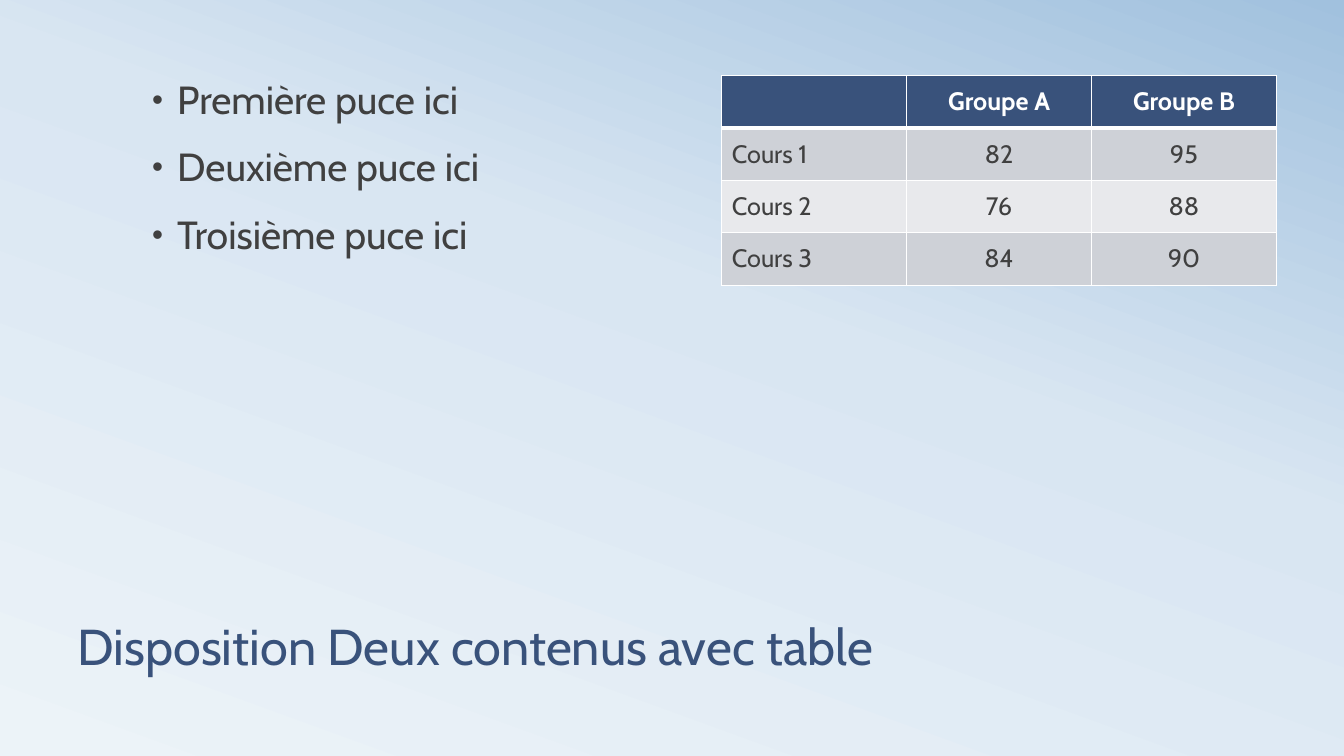
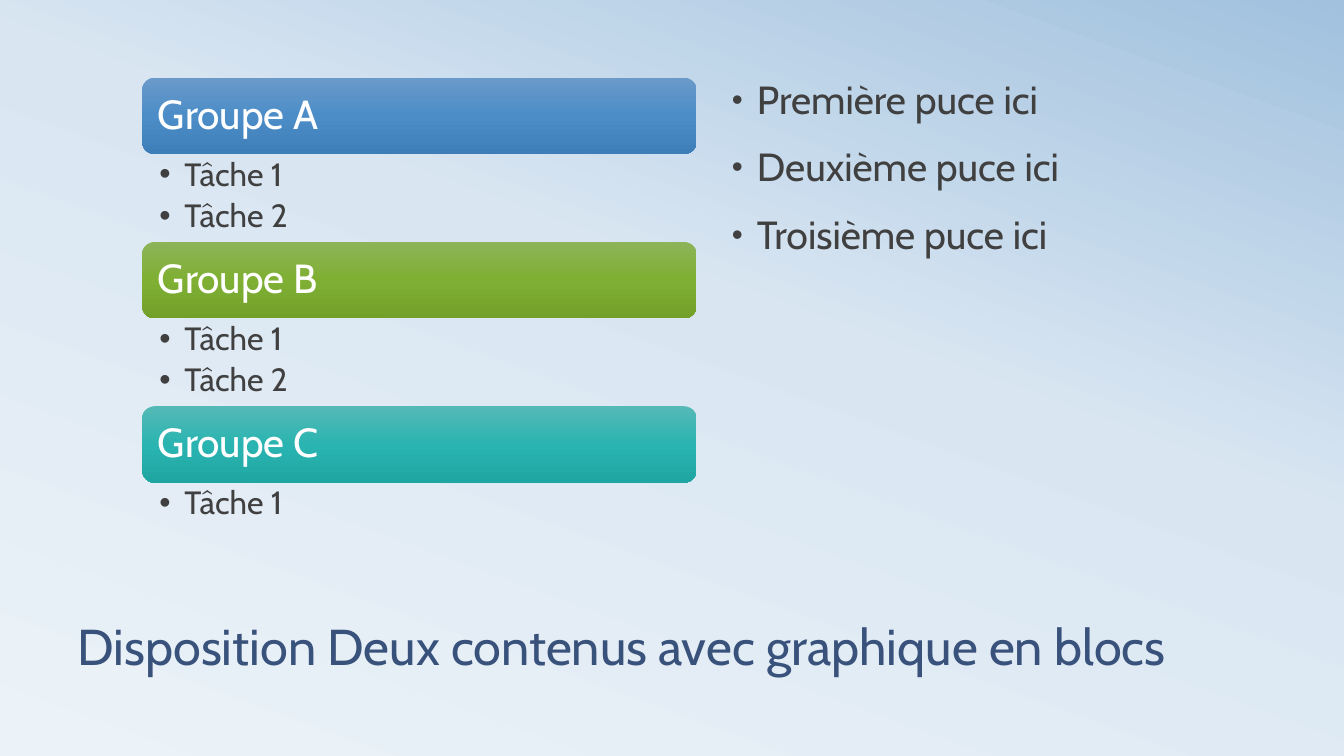
"""Two French slides, each with two contents: bullets with a table, and a task list with bullets."""
from dataclasses import dataclass

from lxml import etree
from pptx import Presentation
from pptx.dml.color import RGBColor
from pptx.enum.shapes import MSO_SHAPE
from pptx.enum.text import MSO_ANCHOR, PP_ALIGN
from pptx.oxml.ns import qn
from pptx.util import Inches, Pt

ROUNDED = MSO_SHAPE.ROUNDED_RECTANGLE
TOP, MIDDLE, BOTTOM = MSO_ANCHOR.TOP, MSO_ANCHOR.MIDDLE, MSO_ANCHOR.BOTTOM
LEFT, CENTER = PP_ALIGN.LEFT, PP_ALIGN.CENTER


@dataclass(frozen=True)
class Theme:
    font: str = "Cabin"
    bullet_font: str = "Arial"
    navy: str = "39527B"
    ink: str = "404040"
    white: str = "FFFFFF"
    bands: tuple = ("E8E9EC", "CED1D7")
    backdrop: tuple = ((0, "ECF3F8"), (58, "D9E6F2"), (100, "A1C1DE"))
    blue: tuple = ((0, "6A9AC9"), (50, "4C8DC8"), (100, "3E7EB8"))
    green: tuple = ((0, "8DB459"), (50, "7FAF33"), (100, "72A029"))
    teal: tuple = ((0, "55B9B6"), (50, "2AB4B1"), (100, "1FA6A3"))
    title: int = 36
    body: int = 28
    group: int = 29
    task: int = 23
    cell: int = 18


T = Theme()


def set_gradient(fill, element, angle, stops):
    fill.gradient()
    fill.gradient_angle = angle
    gs_list = next(element.iter(qn("a:gsLst")))
    gs_list.clear()
    for position, color in stops:
        gs = etree.SubElement(gs_list, qn("a:gs"), pos=str(position * 1000))
        etree.SubElement(gs, qn("a:srgbClr"), val=color)


def write(tf, lines, size, color, anchor=TOP, align=LEFT, bold=False,
          spacing=None, before=0, after=0, bullet=None):
    tf.word_wrap = True
    tf.vertical_anchor = anchor
    for i, line in enumerate(lines):
        p = tf.add_paragraph() if i else tf.paragraphs[0]
        p.alignment = align
        p.line_spacing = spacing
        p.space_before, p.space_after = Pt(before), Pt(after)
        if bullet:
            pPr = p._p.get_or_add_pPr()
            pPr.set("marL", str(Inches(0.25)))
            pPr.set("indent", str(-Inches(0.25)))
            bullet_color = etree.SubElement(pPr, qn("a:buClr"))
            etree.SubElement(bullet_color, qn("a:srgbClr"), val=color)
            etree.SubElement(pPr, qn("a:buSzPct"), val=str(bullet * 1000))
            etree.SubElement(pPr, qn("a:buFont"), typeface=T.bullet_font)
            etree.SubElement(pPr, qn("a:buChar"), char="•")
        r = p.add_run()
        r.text = line
        r.font.name, r.font.size, r.font.bold = T.font, Pt(size), bold
        r.font.color.rgb = RGBColor.from_string(color)


prs = Presentation()
prs.slide_width, prs.slide_height = Inches(13.33), Inches(7.5)
master = prs.slide_master
set_gradient(master.background.fill, master.element, 70, T.backdrop)

LEFT_X, RIGHT_X, CONTENT_Y = 1.41, 7.16, 0.75
CONTENT_W, CONTENT_H = 5.5, 4.58
bullets = ["Première puce ici", "Deuxième puce ici", "Troisième puce ici"]
slides = []
for title, bullets_x in [
    ("Disposition Deux contenus avec table", LEFT_X),
    ("Disposition Deux contenus avec graphique en blocs", RIGHT_X),
]:
    s = prs.slides.add_slide(prs.slide_layouts[6])
    slides.append(s)
    sp = s.shapes.add_textbox(Inches(0.67), Inches(5.58), Inches(12), Inches(1.17))
    write(sp.text_frame, [title], T.title, T.navy, anchor=BOTTOM, spacing=0.8)
    sp = s.shapes.add_textbox(Inches(bullets_x), Inches(CONTENT_Y),
                              Inches(CONTENT_W), Inches(CONTENT_H))
    write(sp.text_frame, bullets, T.body, T.ink, spacing=0.9, before=18, bullet=80)

table_slide, groups_slide = slides

scores = [
    ("", "Groupe A", "Groupe B"),
    ("Cours 1", "82", "95"),
    ("Cours 2", "76", "88"),
    ("Cours 3", "84", "90"),
]
table = table_slide.shapes.add_table(
    len(scores), len(scores[0]), Inches(RIGHT_X), Inches(CONTENT_Y),
    Inches(CONTENT_W), Inches(0.52 * len(scores))).table
for row, values in enumerate(scores):
    header = row == 0
    for col, value in enumerate(values):
        cell = table.cell(row, col)
        tcPr = cell._tc.get_or_add_tcPr()
        for side in ("lnL", "lnR", "lnT", "lnB"):
            thick = (header and side == "lnB") or (row == 1 and side == "lnT")
            ln = etree.SubElement(tcPr, qn(f"a:{side}"), w=str(Pt(3 if thick else 1)))
            line_fill = etree.SubElement(ln, qn("a:solidFill"))
            etree.SubElement(line_fill, qn("a:srgbClr"), val=T.white)
        cell.fill.solid()
        cell.fill.fore_color.rgb = RGBColor.from_string(T.navy if header else T.bands[row % 2])
        cell.vertical_anchor = MIDDLE
        if value:
            write(cell.text_frame, [value], T.cell, T.white if header else T.ink,
                  anchor=MIDDLE, align=CENTER if col else LEFT, bold=header)

BAR_H, TASKS_H = 0.76, 0.87
groups = [
    ("Groupe A", T.blue, ["Tâche 1", "Tâche 2"]),
    ("Groupe B", T.green, ["Tâche 1", "Tâche 2"]),
    ("Groupe C", T.teal, ["Tâche 1"]),
]
for i, (name, stops, tasks) in enumerate(groups):
    y = 0.77 + i * (BAR_H + TASKS_H)
    sp = groups_slide.shapes.add_shape(ROUNDED, Inches(LEFT_X), Inches(y),
                                       Inches(CONTENT_W), Inches(BAR_H))
    sp.shadow.inherit = False
    sp.line.fill.background()
    set_gradient(sp.fill, sp._element, 270, stops)
    tf = sp.text_frame
    tf.margin_left = tf.margin_right = Inches(0.12)
    write(tf, [name], T.group, T.white, anchor=MIDDLE, spacing=0.9)

    sp = groups_slide.shapes.add_textbox(Inches(LEFT_X), Inches(y + BAR_H),
                                         Inches(CONTENT_W), Inches(TASKS_H))
    tf = sp.text_frame
    tf.margin_left, tf.margin_right = Inches(0.17), Inches(0.23)
    tf.margin_top = tf.margin_bottom = Inches(0.04)
    write(tf, tasks, T.task, T.ink, spacing=0.9, after=4.6, bullet=100)

prs.save("out.pptx")
